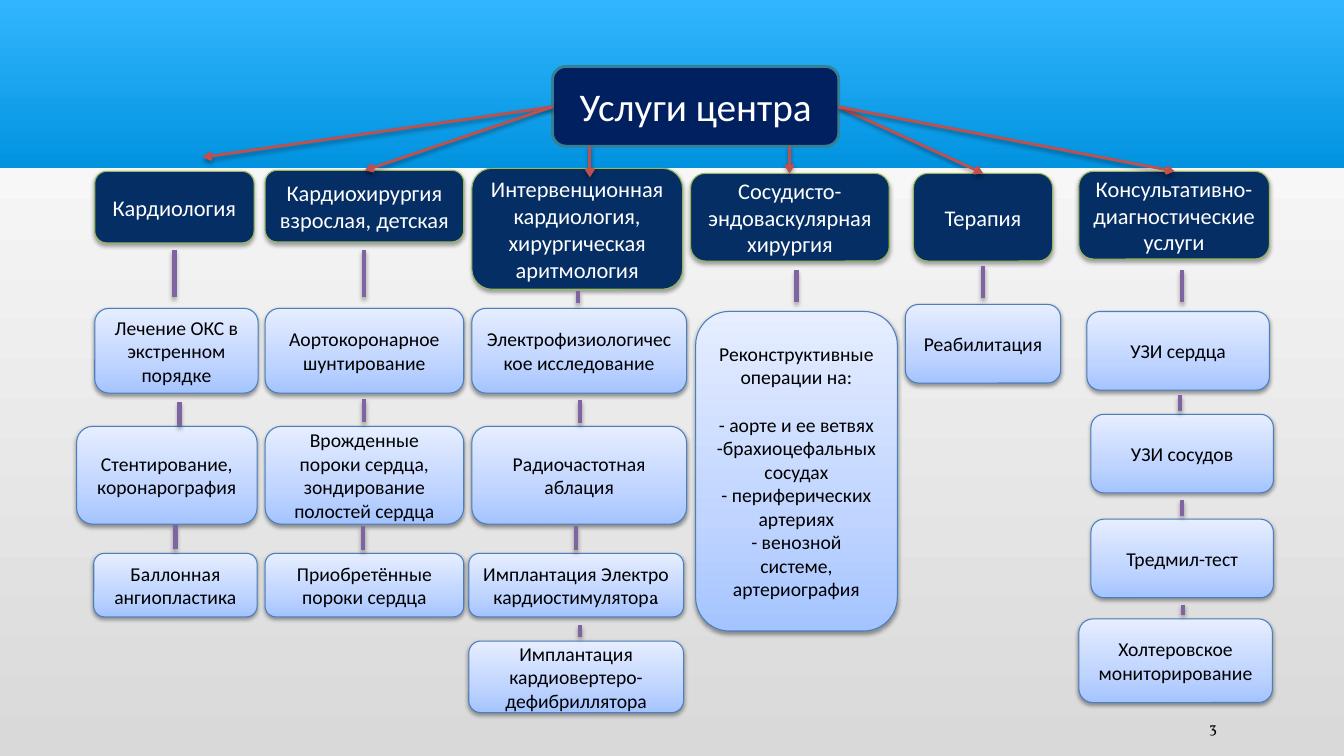
"""Builds the slide with the tree of the cardiology centre's services."""
from copy import deepcopy

from pptx import Presentation
from pptx import util as u
from pptx.dml.color import RGBColor
from pptx.enum import shapes, text
from pptx.oxml import parse_xml
from pptx.oxml.ns import nsdecls

WHITE = RGBColor(0xFF, 0xFF, 0xFF)
BLACK = RGBColor(0x00, 0x00, 0x00)
TITLE_FILL = RGBColor(0x00, 0x20, 0x60)
TITLE_LINE = RGBColor(0x37, 0x7F, 0x92)
HEAD_FILL = RGBColor(0x05, 0x2E, 0x65)
HEAD_LINE = RGBColor(0x98, 0xB9, 0x55)
ITEM_LINE = RGBColor(0x4B, 0x7E, 0xBC)
ARROW = RGBColor(0xC0, 0x50, 0x4D)
LINK = RGBColor(0x80, 0x64, 0xA2)
PAGE_GRAD = [(0, RGBColor(0xD9, 0xD9, 0xD9)), (1, WHITE)]
BAND_GRAD = [(0, RGBColor(0x02, 0x93, 0xE0)), (1, RGBColor(0x31, 0xB6, 0xFD))]
ITEM_GRAD = [(0, RGBColor(0xA4, 0xC4, 0xFF)), (0.35, RGBColor(0xBF, 0xD4, 0xFF)),
             (1, RGBColor(0xE6, 0xEE, 0xFF))]

WIDTH, HEIGHT, BAND = 13.33, 7.5, 1.67
FONTS = ("Calibri", "Vollkorn")
TITLE = ((5.48, 0.66, 2.84, 0.79), "Услуги центра")
NUMBER = ((11.25, 7.09, 0.92, 0.26), "|3")
ROWS = {"first": (3.06, 0.84), "second": (4.23, 0.97), "third": (5.49, 0.63),
        "fourth": (6.36, 0.71), "tall": (3.09, 3.17), "short": (3.02, 0.78),
        "scan 1": (3.09, 0.78), "scan 2": (4.11, 0.78), "scan 3": (5.15, 0.78),
        "scan 4": (6.14, 0.83)}

# Each branch: heading box, heading, arrow, then items as row, left, width, link, text.
BRANCHES = [
    ((0.94, 1.7, 1.58, 0.71), "Кардиология", (5.48, 1.06, 2.01, 1.56), [
        ("first", 0.94, 1.62, (1.73, 2.48, 2.95), "Лечение ОКС в экстренном порядке"),
        ("second", 0.76, 1.79, (1.78, 3.99, 4.23), "Стентирование,\nкоронарография"),
        ("third", 0.93, 1.62, (1.74, 5.21, 5.45), "Баллонная ангиопластика")]),
    ((2.63, 1.69, 1.97, 0.71), "Кардиохирургия взрослая, детская", (5.48, 1.06, 3.62, 1.69), [
        ("first", 2.63, 1.97, (3.61, 2.48, 2.95), "Аортокоронарное шунтирование"),
        ("second", 2.63, 1.97, (3.61, 3.96, 4.19),
         "Врожденные пороки сердца, зондирование полостей сердца"),
        ("third", 2.63, 1.97, (3.6, 5.22, 5.46), "Приобретённые пороки сердца")]),
    ((4.68, 1.67, 2.09, 1.2), "Интервенционная кардиология, хирургическая аритмология",
     (5.85, 1.45, 5.85, 1.76), [
        ("first", 4.68, 2.13, (5.73, 2.89, 3.01), "Электрофизиологическое исследование"),
        ("second", 4.68, 2.13, (5.75, 3.97, 4.2), "Радиочастотная аблация"),
        ("third", 4.65, 2.13, (5.71, 5.22, 5.46), "Имплантация Электро\nкардиостимулятор|а"),
        ("fourth", 4.65, 2.13, (5.75, 6.2, 6.32), "Имплантация кардиовертеро-дефибриллятора")]),
    ((6.85, 1.72, 1.97, 0.87), "Сосудисто-эндоваскулярная хирургия", (7.83, 1.45, 7.83, 1.72), [
        ("tall", 6.9, 2, (7.9, 2.68, 3),
         "Реконструктивные операции на:\n- аорте и ее ветвях\n-брахиоцефальных сосудах\n"
         "- периферических артериях\n- венозной системе, артериография")]),
    ((9.06, 1.72, 1.38, 0.87), "Терапия", (8.32, 1.06, 9.75, 1.72), [
        ("short", 8.98, 1.54, (9.75, 2.64, 2.96), "Реабилитация")]),
    ((10.7, 1.7, 1.89, 0.87), "Консультативно-диагностические услуги", (8.32, 1.06, 11.65, 1.7), [
        ("scan 1", 10.78, 1.81, (11.72, 2.68, 3), "УЗИ сердца"),
        ("scan 2", 10.82, 1.81, (11.7, 3.92, 4.08), "УЗИ сосудов"),
        ("scan 3", 10.82, 1.81, (11.72, 4.96, 5.12), "Тредмил-тест"),
        ("scan 4", 10.7, 1.92, (11.73, 6, 6.1), "Холтеровское мониторирование")]),
]


def inches(values):
    """Turn plain numbers into lengths."""
    return [u.Inches(v) for v in values]


def paint(fill, owner, stops):
    """Fill with a gradient that runs from bottom to top."""
    fill.gradient()
    fill.gradient_angle = 90
    gs = owner.xpath(".//a:gsLst")[0]
    while len(gs) < len(stops):
        gs.append(deepcopy(gs[0]))
    for stop, (position, color) in zip(fill.gradient_stops, stops):
        stop.position = position
        stop.color.rgb = color


def shade(sp, alpha, dist):
    """Give a shape or line a soft shadow below it."""
    sp._element.spPr.append(parse_xml(
        f'<a:effectLst {nsdecls("a")}><a:outerShdw blurRad="{u.Pt(3.1)}" dist="{u.Pt(dist)}" '
        f'dir="5400000" rotWithShape="0"><a:srgbClr val="000000"><a:alpha val="{alpha * 1000}"/>'
        '</a:srgbClr></a:outerShdw></a:effectLst>'))


def write(sp, words, size, color, align=text.PP_ALIGN.CENTER):
    """Write one paragraph a line; a bar switches to the second font."""
    tf = sp.text_frame
    tf.word_wrap = True
    tf.vertical_anchor = text.MSO_ANCHOR.MIDDLE
    for i, line in enumerate(words.split("\n")):
        p = tf.add_paragraph() if i else tf.paragraphs[0]
        p.alignment = align
        for name, part in zip(FONTS, line.split("|")):
            if part:
                r = p.add_run()
                r.text = part
                for key, value in {"name": name, "size": u.Pt(size)}.items():
                    setattr(r.font, key, value)
                r.font.color.rgb = color
    return tf


def box(s, place, words, fill, line, weight, size, color, shadow=None):
    """Add a rounded box with text."""
    sp = s.shapes.add_shape(shapes.MSO_SHAPE.ROUNDED_RECTANGLE, *inches(place))
    if isinstance(fill, list):
        paint(sp.fill, sp._element, fill)
    else:
        sp.fill.solid()
        sp.fill.fore_color.rgb = fill
    sp.line.color.rgb = line
    sp.line.width = u.Pt(weight)
    if shadow:
        shade(sp, *shadow)
    else:
        sp.shadow.inherit = False
    return write(sp, words, size, color)


def connect(s, ends, color, weight, shadow, head=False):
    """Add a straight line, with an arrowhead if asked."""
    c = s.shapes.add_connector(shapes.MSO_CONNECTOR.STRAIGHT, *inches(ends))
    c.line.color.rgb = color
    c.line.width = u.Pt(weight)
    if head:
        c.line._get_or_add_ln().append(parse_xml(f'<a:tailEnd {nsdecls("a")} type="arrow"/>'))
    shade(c, *shadow)


def main():
    """Draw the slide and save it."""
    prs = Presentation()
    prs.slide_width, prs.slide_height = inches((WIDTH, HEIGHT))
    s = prs.slides.add_slide(prs.slide_layouts[6])
    paint(s.background.fill, s.element, PAGE_GRAD)

    band = s.shapes.add_shape(shapes.MSO_SHAPE.RECTANGLE, *inches((0, 0, WIDTH, BAND)))
    paint(band.fill, band._element, BAND_GRAD)
    band.line.fill.background()
    band.shadow.inherit = False
    box(s, *TITLE, TITLE_FILL, TITLE_LINE, 2, 28, WHITE)

    for place, heading, arrow, items in BRANCHES:
        box(s, place, heading, HEAD_FILL, HEAD_LINE, 0.75, 16, WHITE, (35, 1.8))
        for row, left, width, (x, start, end), words in items:
            top, height = ROWS[row]
            tf = box(s, (left, top, width, height), words, ITEM_GRAD, ITEM_LINE,
                     0.75, 14, BLACK, (38, 1.6))
            if row == "tall":
                tf.paragraphs[1].space_before = u.Pt(17)
            connect(s, (x, start, x, end), LINK, 3, (35, 1.8))
    for _, _, arrow, _ in BRANCHES:
        connect(s, arrow, ARROW, 2, (38, 1.6), head=True)

    place, number = NUMBER
    write(s.shapes.add_textbox(*inches(place)), number, 11, BLACK, text.PP_ALIGN.RIGHT)
    prs.save("out.pptx")


if __name__ == "__main__":
    main()
